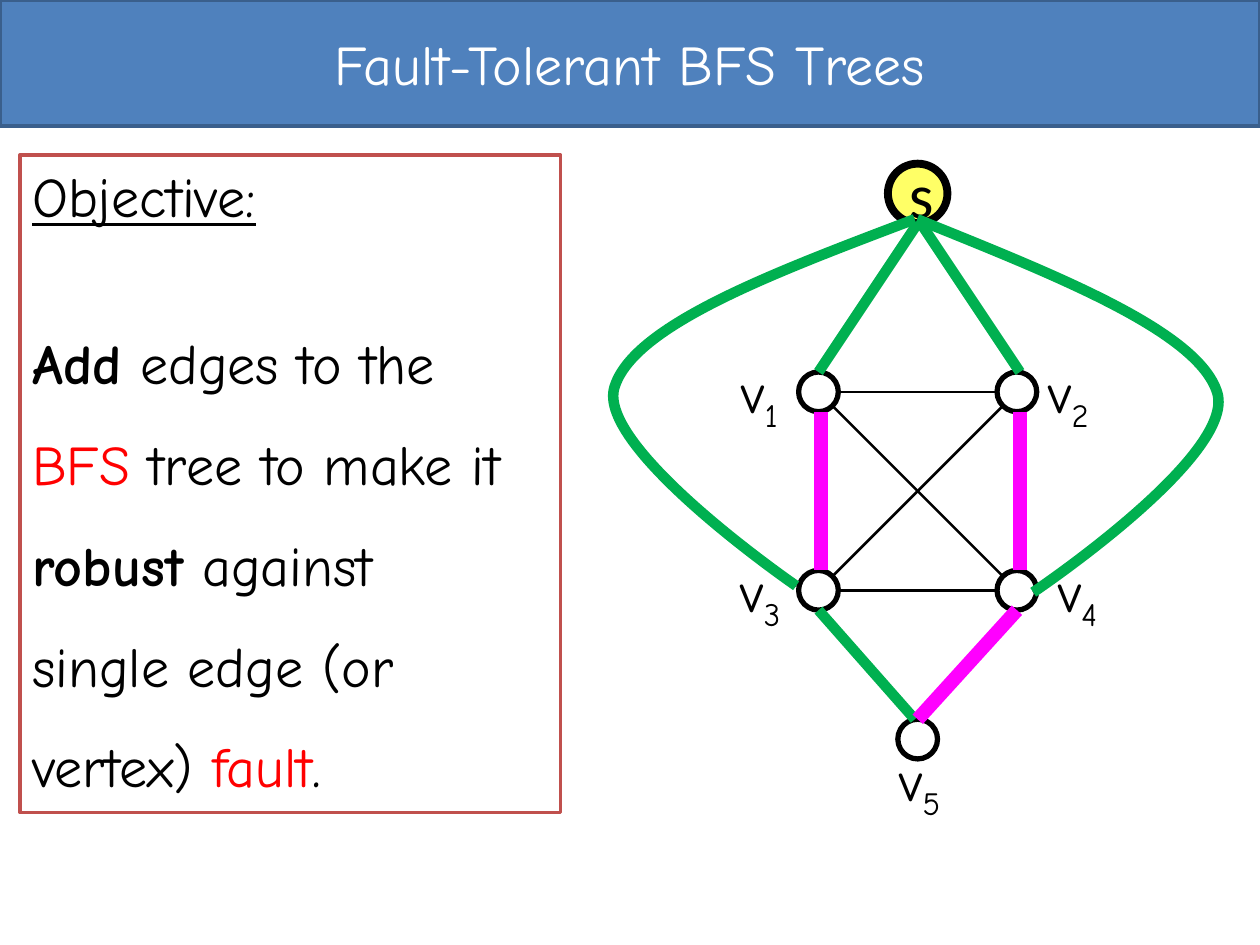
"""Build a slide showing a fault-tolerant BFS tree beside its objective."""
from pptx import Presentation
from pptx.dml.color import RGBColor
from pptx.enum.shapes import MSO_CONNECTOR as LINK, MSO_SHAPE as SHAPE
from pptx.enum.text import MSO_ANCHOR as ANCHOR, MSO_AUTO_SIZE as FIT, PP_ALIGN as ALIGN
from pptx.oxml.ns import qn
from pptx.util import Cm, Pt
from lxml.etree import SubElement

BLUE = RGBColor(0x4F, 0x81, 0xBD)
NAVY = RGBColor(0x3A, 0x5F, 0x8C)
BRICK = RGBColor(0xC0, 0x50, 0x4D)
YELLOW = RGBColor(0xFF, 0xFF, 0x66)
GREEN = RGBColor(0x00, 0xB0, 0x50)
MAGENTA = RGBColor(0xFF, 0x00, 0xFF)
RED = RGBColor(0xFF, 0x00, 0x00)
BLACK = RGBColor(0x00, 0x00, 0x00)
WHITE = RGBColor(0xFF, 0xFF, 0xFF)


def add_span(para, text, size=32, font="Comic Neue", color=BLACK, bold=False, underline=False, baseline=None):
    span = para.add_run()
    span.text = text
    span.font.size = Pt(size)
    span.font.name = font
    span.font.color.rgb = color
    span.font.bold = bold
    span.font.underline = underline
    if baseline:
        span.font._element.set("baseline", str(baseline))


def style(shape, fill, line, width):
    shape.shadow.inherit = False
    if fill is None:
        shape.fill.background()
    else:
        shape.fill.solid()
        shape.fill.fore_color.rgb = fill
    shape.line.color.rgb = line
    shape.line.width = Pt(width)


deck = Presentation()
deck.slide_width, deck.slide_height = Cm(25.4), Cm(19.05)
page = deck.slides.add_slide(deck.slide_layouts[6])

banner = page.shapes.add_shape(SHAPE.RECTANGLE, 0, 0, Cm(25.4), Cm(2.54))
style(banner, BLUE, NAVY, 2)
banner.text_frame.vertical_anchor = ANCHOR.MIDDLE
para = banner.text_frame.paragraphs[0]
para.alignment = ALIGN.CENTER
add_span(para, "Fault-Tolerant BFS Trees", color=WHITE)

panel = page.shapes.add_shape(SHAPE.RECTANGLE, Cm(0.4), Cm(3.13), Cm(10.9), Cm(13.25))
style(panel, WHITE, BRICK, 2)
panel.text_frame.vertical_anchor = ANCHOR.TOP
panel.text_frame.auto_size = FIT.SHAPE_TO_FIT_TEXT
para = panel.text_frame.paragraphs[0]
para.alignment = ALIGN.LEFT
para.space_after = Pt(38)
add_span(para, "Objective:", underline=True)

objective = [
    [("Add", {"bold": True}), (" edges to the ", {}), ("BFS", {"color": RED}),
     (" tree to make it ", {}), ("robust", {"bold": True}), (" against", {})],
    [("single edge (or vertex) ", {}), ("fault", {"color": RED}), (".", {})],
]
for spans in objective:
    para = panel.text_frame.add_paragraph()
    para.alignment = ALIGN.LEFT
    para.line_spacing = 1.5
    for text, look in spans:
        add_span(para, text, **look)

LEFT, MIDDLE, RIGHT = 16.5, 18.5, 20.5
SOURCE, UPPER, LOWER, BOTTOM = 3.9, 7.9, 11.9, 14.9
RADIUS, SOURCE_RADIUS, DIAGONAL = 0.4, 0.6, 0.28
SHIFT = 0.06

nodes = [
    (LEFT, UPPER, RADIUS, WHITE, 3),
    (RIGHT, UPPER, RADIUS, WHITE, 3),
    (RIGHT, LOWER, RADIUS, WHITE, 3),
    (LEFT, LOWER, RADIUS, WHITE, 3),
    (MIDDLE, BOTTOM, RADIUS, WHITE, 3),
    (MIDDLE, SOURCE, SOURCE_RADIUS, YELLOW, 4.5),
]
for x, y, radius, fill, width in nodes:
    node = page.shapes.add_shape(SHAPE.OVAL, Cm(x - radius), Cm(y - radius), Cm(2 * radius), Cm(2 * radius))
    style(node, fill, BLACK, width)

node.text_frame.vertical_anchor = ANCHOR.MIDDLE
para = node.text_frame.paragraphs[0]
para.alignment = ALIGN.CENTER
add_span(para, "s", size=36, font="Calibri")

root_foot = SOURCE + SOURCE_RADIUS
upper_top, upper_foot = UPPER - RADIUS, UPPER + RADIUS
lower_top, lower_foot = LOWER - RADIUS, LOWER + RADIUS
bottom_top = BOTTOM - RADIUS
inner_left, inner_right = LEFT + RADIUS, RIGHT - RADIUS
near_left, near_right = LEFT + DIAGONAL, RIGHT - DIAGONAL

plain_edges = [
    (inner_right, UPPER, inner_left, UPPER),
    (inner_right, LOWER, inner_left, LOWER),
    (near_right, LOWER - DIAGONAL, near_left, UPPER + DIAGONAL),
    (near_right, UPPER + DIAGONAL, near_left, LOWER - DIAGONAL),
    (LEFT, upper_foot, LEFT, lower_top),
    (RIGHT, upper_foot, RIGHT, lower_top),
    (MIDDLE, root_foot, LEFT, upper_top),
    (MIDDLE, root_foot, RIGHT, upper_top),
    (MIDDLE, bottom_top, RIGHT, lower_foot),
    (MIDDLE - SHIFT, bottom_top, LEFT, lower_foot),
]
tree_edges = [
    (MIDDLE, root_foot, LEFT, upper_top),
    (MIDDLE + SHIFT, root_foot, RIGHT + SHIFT, upper_top),
    (MIDDLE - SHIFT, bottom_top, LEFT, lower_foot),
]
added_edges = [
    (LEFT + SHIFT, upper_foot, LEFT + SHIFT, lower_top),
    (RIGHT + SHIFT, upper_foot, RIGHT + SHIFT, lower_top),
    (RIGHT, lower_foot, MIDDLE, bottom_top),
]
arcs = [
    [(18.49, 4.42), (21.31, 5.56), (24.16, 6.68), (24.54, 7.92),
     (24.92, 9.19), (20.83, 11.94), (20.83, 11.94)],
    [(18.44, 4.42), (15.62, 5.49), (12.78, 6.55), (12.39, 7.8),
     (11.99, 9.02), (16.05, 11.81), (16.05, 11.81)],
]

layers = [(plain_edges, arcs, BLACK, 1.5, 2), (tree_edges, arcs, GREEN, 6, 6), (added_edges, [], MAGENTA, 8, 8)]
for edges, curves, color, edge_width, curve_width in layers:
    for x1, y1, x2, y2 in edges:
        edge = page.shapes.add_connector(LINK.STRAIGHT, Cm(x1), Cm(y1), Cm(x2), Cm(y2))
        edge.line.color.rgb = color
        edge.line.width = Pt(edge_width)
        SubElement(edge._element.spPr, qn("a:effectLst"))
    for controls in curves:
        points = [(Cm(x), Cm(y)) for x, y in controls]
        builder = page.shapes.build_freeform(*points[0])
        builder.add_line_segments([points[3], points[6]], close=False)
        arc = builder.convert_to_shape()
        style(arc, None, color, curve_width)
        outline = next(arc._element.iter(qn("a:path")))
        for segment in outline.findall(qn("a:lnTo")):
            outline.remove(segment)
        for start in (1, 4):
            bend = SubElement(outline, qn("a:cubicBezTo"))
            for x, y in points[start:start + 3]:
                SubElement(bend, qn("a:pt"), x=str(x - arc.left), y=str(y - arc.top))

labels = [("1", 14.7, 7.09, 1.42), ("2", 20.88, 7.09, 1.52), ("4", 21.08, 11.1, 1.52),
          ("3", 14.68, 11.1, 1.52), ("5", 17.88, 14.91, 1.52)]
for index, x, y, width in labels:
    box = page.shapes.add_textbox(Cm(x), Cm(y), Cm(width), Cm(1.63))
    box.text_frame.word_wrap = False
    box.text_frame.auto_size = FIT.SHAPE_TO_FIT_TEXT
    para = box.text_frame.paragraphs[0]
    add_span(para, "v")
    add_span(para, index, baseline=-25000)

deck.save("out.pptx")
